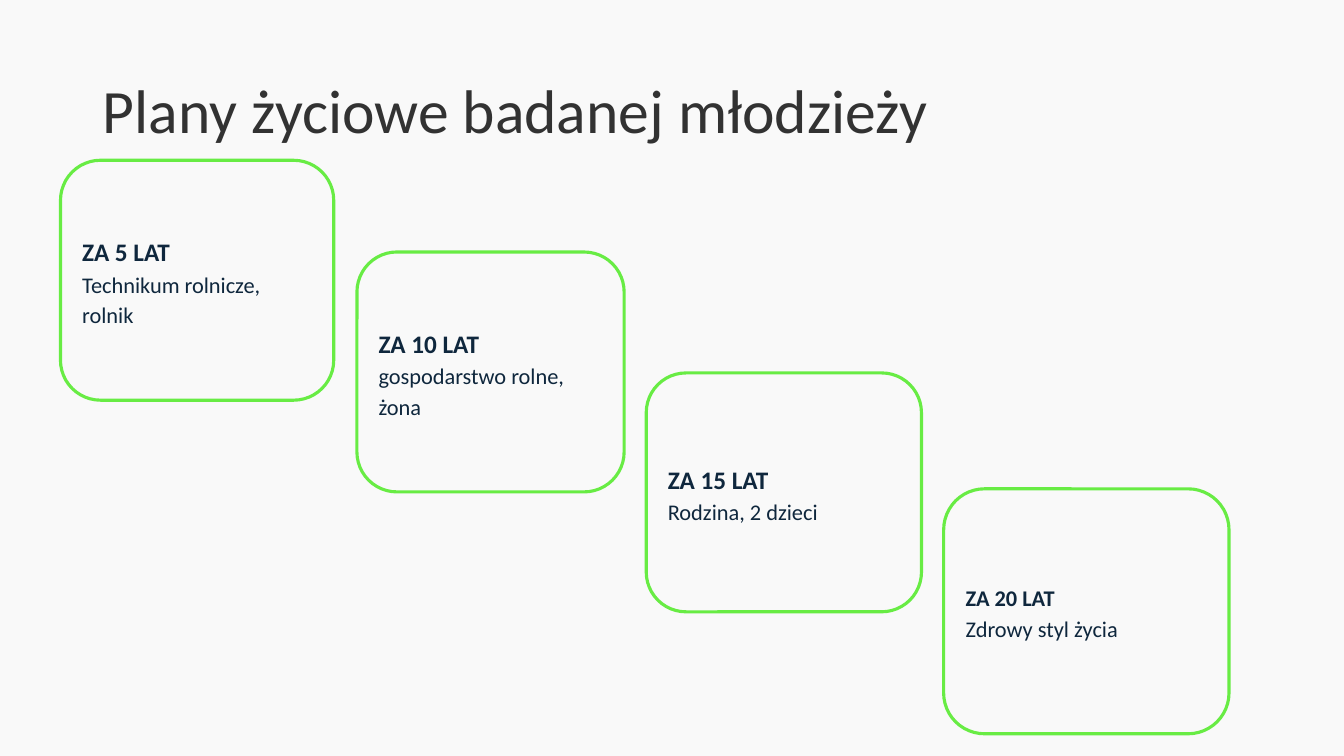
from pptx import Presentation
from pptx.dml.color import RGBColor
from pptx.enum.shapes import MSO_SHAPE
from pptx.enum.text import MSO_ANCHOR, PP_ALIGN
from pptx.util import Pt

SCALE = 9144  # EMU per px, 100 px to the inch
PAPER, INK, NAVY, GREEN = "F9F9F9", "323232", "0F273D", "68EC44"

# left, top, width, height, heading size, heading, plan
PLANS = [
    (60, 159, 271, 238, 18, "ZA 5 LAT", "Technikum rolnicze, rolnik"),
    (354, 250, 265, 238, 18, "ZA 10 LAT", "gospodarstwo rolne, żona"),
    (641, 370, 273, 237, 18, "ZA 15 LAT", "Rodzina, 2 dzieci"),
    (936, 485, 283, 243, 16, "ZA 20 LAT", "Zdrowy styl życia"),
]


def px(*sizes):
    return [size * SCALE for size in sizes]


def paint(color, code):
    color.rgb = RGBColor.from_string(code)


def fill(target, code):
    target.fill.solid()
    paint(target.fill.fore_color, code)


class Deck:
    font = "Calibri"

    def __init__(self, width, height):
        self.file = Presentation()
        self.file.slide_width, self.file.slide_height = px(width, height)
        self.slide = self.file.slides.add_slide(self.file.slide_layouts[5])
        fill(self.slide.background, PAPER)

    def line(self, par, text, size, code, space, bold=False):
        """Fill one paragraph with styled text."""
        par.text = text
        par.alignment = PP_ALIGN.LEFT
        par.line_spacing = space
        par.font.name, par.font.size, par.font.bold = self.font, Pt(size), bold
        paint(par.font.color, code)

    def title(self, text, *box):
        title = self.slide.shapes.title
        title.left, title.top, title.width, title.height = px(*box)
        frame = title.text_frame
        frame.vertical_anchor = MSO_ANCHOR.MIDDLE
        self.line(frame.paragraphs[0], text, 44, INK, 0.9)

    def card(self, box, size, head, plan):
        card = self.slide.shapes.add_shape(MSO_SHAPE.ROUNDED_RECTANGLE, *px(*box))
        card.shadow.inherit = False
        fill(card, PAPER)
        paint(card.line.color, GREEN)
        card.line.width = Pt(2.25)
        frame = card.text_frame
        frame.word_wrap = True
        frame.vertical_anchor = MSO_ANCHOR.MIDDLE
        self.line(frame.paragraphs[0], head, size, NAVY, 1.15, True)
        self.line(frame.add_paragraph(), plan, 16, NAVY, 1.15)


def main():
    deck = Deck(1333, 750)
    deck.title("Plany życiowe badanej młodzieży", 92, 40, 1150, 145)
    for *box, size, head, plan in PLANS:
        deck.card(box, size, head, plan)
    deck.file.save("out.pptx")


if __name__ == "__main__":
    main()
